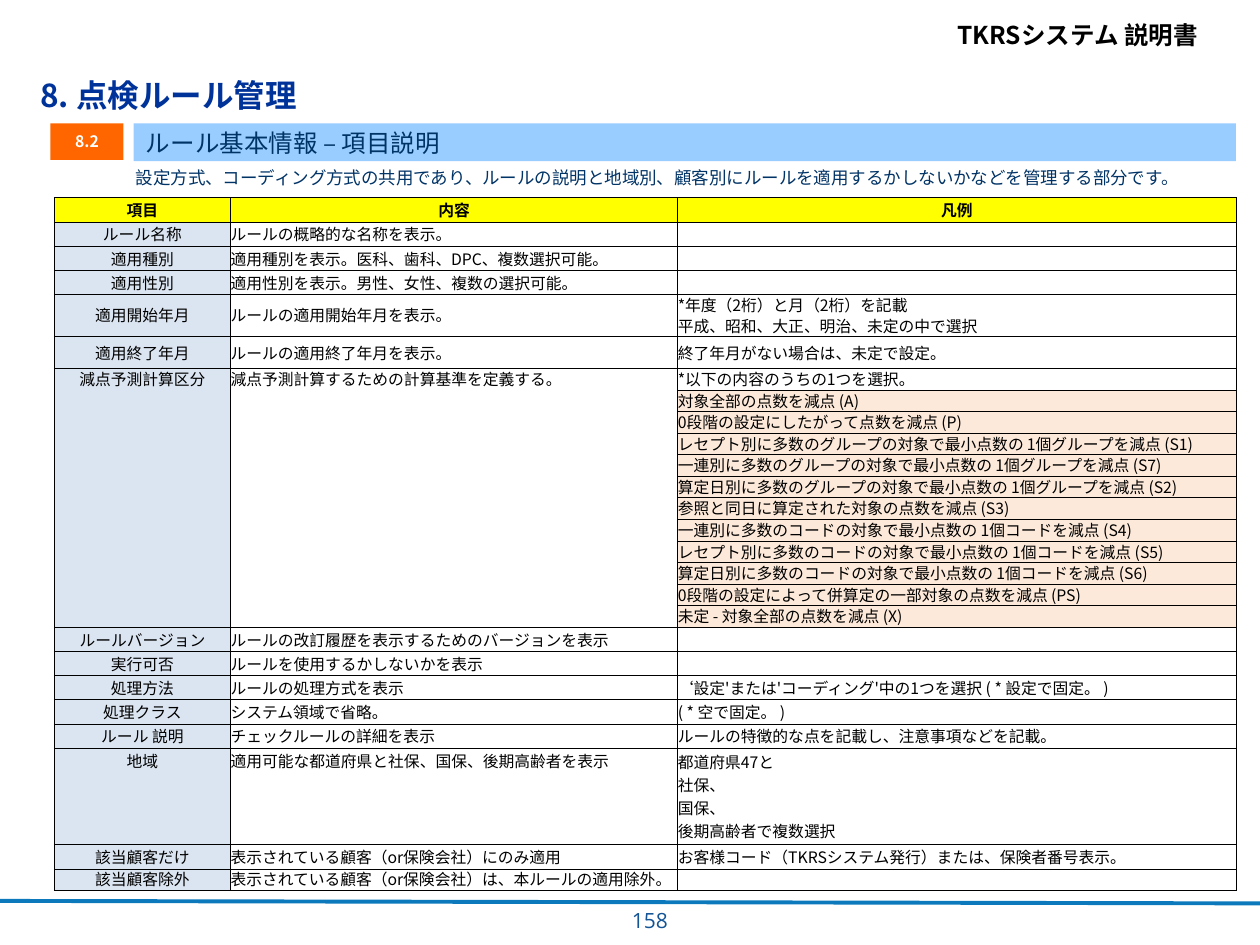
import pptx
import pptx.dml.color
import pptx.enum.shapes
import pptx.enum.text
import pptx.oxml
import pptx.oxml.ns
import pptx.util

COLUMNS, ROWS = 1000, 750
WIDTH, HEIGHT = pptx.util.Inches(10), pptx.util.Inches(7.5)
CENTER = pptx.enum.text.PP_ALIGN.CENTER
LEFT = pptx.enum.text.PP_ALIGN.LEFT
RIGHT = pptx.enum.text.PP_ALIGN.RIGHT
TOP = pptx.enum.text.MSO_ANCHOR.TOP
MIDDLE = pptx.enum.text.MSO_ANCHOR.MIDDLE
JAPANESE, NUMERIC = "Noto Sans CJK JP", "Open Sans"
SIDES = "LRTB"

THEME = {
    "header": dict(size=14, color="000000", bold=True, name=JAPANESE),
    "title": dict(size=18, color="003399", bold=True, name=JAPANESE),
    "badge": dict(size=9, color="FFFFFF", bold=True, name=JAPANESE),
    "section": dict(size=14, color="003366", bold=False, name=JAPANESE),
    "summary": dict(size=10, color="003366", bold=False, name=JAPANESE),
    "heading": dict(size=9, color="000000", bold=True, name=JAPANESE),
    "cell": dict(size=9, color="000000", bold=False, name=JAPANESE),
    "page": dict(size=12, color="125496", bold=False, name=NUMERIC),
    "blank_size": 6,
    "fills": dict(heading="FFFF00", item="DBE5F1", plain="FFFFFF",
                  option="FDE9D9", badge="FF6600", section="99CCFF"),
    "rule": "0C79BC",
}

PLAIN, OPTION, DOUBLE = 19.2, 17.15, 33.3
TIGHT = 0.91
RULES = [
    (PLAIN, "ルール名称", "ルールの概略的な名称を表示。", ""),
    (PLAIN, "適用種別", "適用種別を表示。医科、歯科、DPC、複数選択可能。", ""),
    (PLAIN, "適用性別", "適用性別を表示。男性、女性、複数の選択可能。", ""),
    (DOUBLE, "適用開始年月", "ルールの適用開始年月を表示。",
     "*年度（2桁）と月（2桁）を記載\v平成、昭和、大正、明治、未定の中で選択"),
    (25.4, "適用終了年月", "ルールの適用終了年月を表示。", "終了年月がない場合は、未定で設定。"),
    (OPTION, "減点予測計算区分", "減点予測計算するための計算基準を定義する。", [
        "*以下の内容のうちの1つを選択。",
        "対象全部の点数を減点 (A)",
        "0段階の設定にしたがって点数を減点 (P)",
        "レセプト別に多数のグループの対象で最小点数の 1個グループを減点 (S1)",
        "一連別に多数のグループの対象で最小点数の 1個グループを減点 (S7)",
        "算定日別に多数のグループの対象で最小点数の 1個グループを減点 (S2)",
        "参照と同日に算定された対象の点数を減点 (S3)",
        "一連別に多数のコードの対象で最小点数の 1個コードを減点 (S4)",
        "レセプト別に多数のコードの対象で最小点数の 1個コードを減点 (S5)",
        "算定日別に多数のコードの対象で最小点数の 1個コードを減点 (S6)",
        "0段階の設定によって併算定の一部対象の点数を減点 (PS)",
        "未定 - 対象全部の点数を減点 (X)"]),
    (PLAIN, "ルールバージョン", "ルールの改訂履歴を表示するためのバージョンを表示", ""),
    (PLAIN, "実行可否", "ルールを使用するかしないかを表示", ""),
    (PLAIN, "処理方法", "ルールの処理方式を表示",
     "‘設定'または'コーディング'中の1つを選択 ( * 設定で固定。 )"),
    (PLAIN, "処理クラス", "システム領域で省略。", "( * 空で固定。 )"),
    (PLAIN, "ルール 説明", "チェックルールの詳細を表示", "ルールの特徴的な点を記載し、注意事項などを記載。"),
    (PLAIN, "地域", "適用可能な都道府県と社保、国保、後期高齢者を表示",
     ["都道府県47と\v社保、\v国保、\v後期高齢者で複数選択", None, None, None]),
    (PLAIN, "該当顧客だけ", "表示されている顧客（or保険会社）にのみ適用",
     "お客様コード（TKRSシステム発行）または、保険者番号表示。"),
    (OPTION, "該当顧客除外", "表示されている顧客（or保険会社）は、本ルールの適用除外。", ""),
]


def across(columns):
    return round(WIDTH * columns / COLUMNS)


def down(rows):
    return round(HEIGHT * rows / ROWS)


def place(box):
    left, top, width, height = box
    return across(left), down(top), across(width), down(height)


def rgb(value):
    return pptx.dml.color.RGBColor.from_string(value)


def element(tag, **attributes):
    made = pptx.oxml.parse_xml(f"<{tag} {pptx.oxml.ns.nsdecls('a')}/>")
    for key, value in attributes.items():
        made.set(key, value)
    return made


def write(frame, text, style, alignment=LEFT, anchor=TOP, indent=0, wrap=True, spacing=None):
    frame.auto_size = pptx.enum.text.MSO_AUTO_SIZE.NONE
    frame.word_wrap = wrap
    frame.vertical_anchor = anchor
    paragraph = frame.paragraphs[0]
    paragraph.text = text
    paragraph.alignment = alignment
    paragraph.line_spacing = spacing
    if indent:
        properties = paragraph._p.get_or_add_pPr()
        properties.set("marL", str(across(indent)))
        properties.set("indent", str(-across(indent)))
    formats = dict(THEME[style])
    formats["size"] = pptx.util.Pt(formats["size"])
    color = rgb(formats.pop("color"))
    for run in paragraph.runs:
        for key, value in formats.items():
            setattr(run.font, key, value)
        run.font.color.rgb = color
        run.font._element.append(element("a:ea", typeface=formats["name"]))
    if not text:
        paragraph._p.append(element("a:endParaRPr", sz=str(THEME["blank_size"] * 100)))


def text_box(slide, box, text, style, **layout):
    label = slide.shapes.add_textbox(*place(box))
    write(label.text_frame, text, style, **layout)


def panel(slide, box, fill, text, style, **layout):
    band = slide.shapes.add_shape(pptx.enum.shapes.MSO_SHAPE.RECTANGLE, *place(box))
    band.shadow.inherit = False
    band.fill.solid()
    band.fill.fore_color.rgb = rgb(THEME["fills"][fill])
    band.line.fill.background()
    write(band.text_frame, text, style, **layout)


def page_frame(slide, box):
    left, top, width, height = box
    rule = slide.shapes.add_connector(
        pptx.enum.shapes.MSO_CONNECTOR.STRAIGHT, across(left), down(top + 715),
        across(left + width), down(top + 717))
    rule.line.color.rgb = rgb(THEME["rule"])
    rule.line.width = pptx.util.Pt(2.25)
    rule._element.spPr.append(element("a:effectLst"))
    text_box(slide, (left + 750, top + 11, 216, 34), "TKRSシステム 説明書", "header", wrap=False)
    text_box(slide, (left + 487, top + 715, 53, 28), "158", "page", alignment=RIGHT)


def chapter_title(slide, box):
    title = slide.shapes.title
    title.left, title.top, title.width, title.height = place(box)
    frame = title.text_frame
    frame.margin_top = frame.margin_bottom = 0
    write(frame, "8. 点検ルール管理", "title", indent=62)


def section_header(slide, box):
    left, top, width, height = box
    panel(slide, (left + 58, top + 30, 863, 27), "plain",
          "設定方式、コーディング方式の共用であり、ルールの説明と地域別、顧客別にルールを適用するかしないかなどを管理する部分です。",
          "summary", indent=67, wrap=False)
    panel(slide, (left, top, 58, 29), "badge", "8.2", "badge",
          alignment=CENTER, anchor=MIDDLE, indent=10, spacing=0.95)
    panel(slide, (left + 66, top, width - 66, 30), "section",
          "ルール基本情報 – 項目説明", "section", anchor=MIDDLE, indent=10)


def fill_cell(cell, text, fill, style="cell", alignment=LEFT, hidden="", spacing=None):
    for side in ("left", "right", "top", "bottom"):
        setattr(cell, f"margin_{side}", 0)
    properties = cell._tc.get_or_add_tcPr()
    for side in SIDES:
        border = element(f"a:ln{side}", w=str(pptx.util.Pt(0.5)))
        if side in hidden:
            border.append(element("a:noFill"))
        else:
            ink = element("a:solidFill")
            ink.append(element("a:srgbClr", val="000000"))
            border.append(ink)
        properties.append(border)
    cell.fill.solid()
    cell.fill.fore_color.rgb = rgb(THEME["fills"][fill])
    write(cell.text_frame, text, style, alignment, MIDDLE, spacing=spacing)
    cell.vertical_anchor = MIDDLE


def rule_table(slide, box):
    lines = []
    for height, item, content, examples in RULES:
        group = examples if isinstance(examples, list) else [examples]
        for step, example in enumerate(group):
            hidden = ("T" if step else "") + ("B" if step < len(group) - 1 else "")
            names = ("", "") if step else (item, content)
            lines.append((height, *names, example, hidden, step))
    table = slide.shapes.add_table(len(lines) + 1, 3, *place(box)).table
    table.first_row = table.horz_banding = False
    for column, width in zip(table.columns, (140, 355, 443)):
        column.width = across(width)
    table.rows[0].height = down(PLAIN)
    for column, heading in enumerate(("項目", "内容", "凡例")):
        fill_cell(table.cell(0, column), heading, "heading", "heading", CENTER)
    for row, (height, item, content, example, hidden, step) in enumerate(lines, 1):
        table.rows[row].height = down(height)
        spacing = TIGHT if height in (OPTION, DOUBLE) else None
        fill_cell(table.cell(row, 0), item, "item", alignment=CENTER, hidden=hidden, spacing=spacing)
        fill_cell(table.cell(row, 1), content, "plain", hidden=hidden, spacing=spacing)
        option = "option" if step and example else "plain"
        fill_cell(table.cell(row, 2), example or "", option, spacing=spacing)
        if example is None and lines[row - 2][3] is not None:
            table.cell(row - 1, 2).merge(table.cell(row + 2, 2))


def main():
    deck = pptx.Presentation()
    deck.slide_width, deck.slide_height = WIDTH, HEIGHT
    slide = deck.slides.add_slide(deck.slide_layouts[5])
    page_frame(slide, (0, 0, COLUMNS, ROWS))
    chapter_title(slide, (22, 60, 974, 42))
    rule_table(slide, (43, 157, 938, 551))
    section_header(slide, (40, 98, 941, 57))
    deck.save("out.pptx")


if __name__ == "__main__":
    main()
